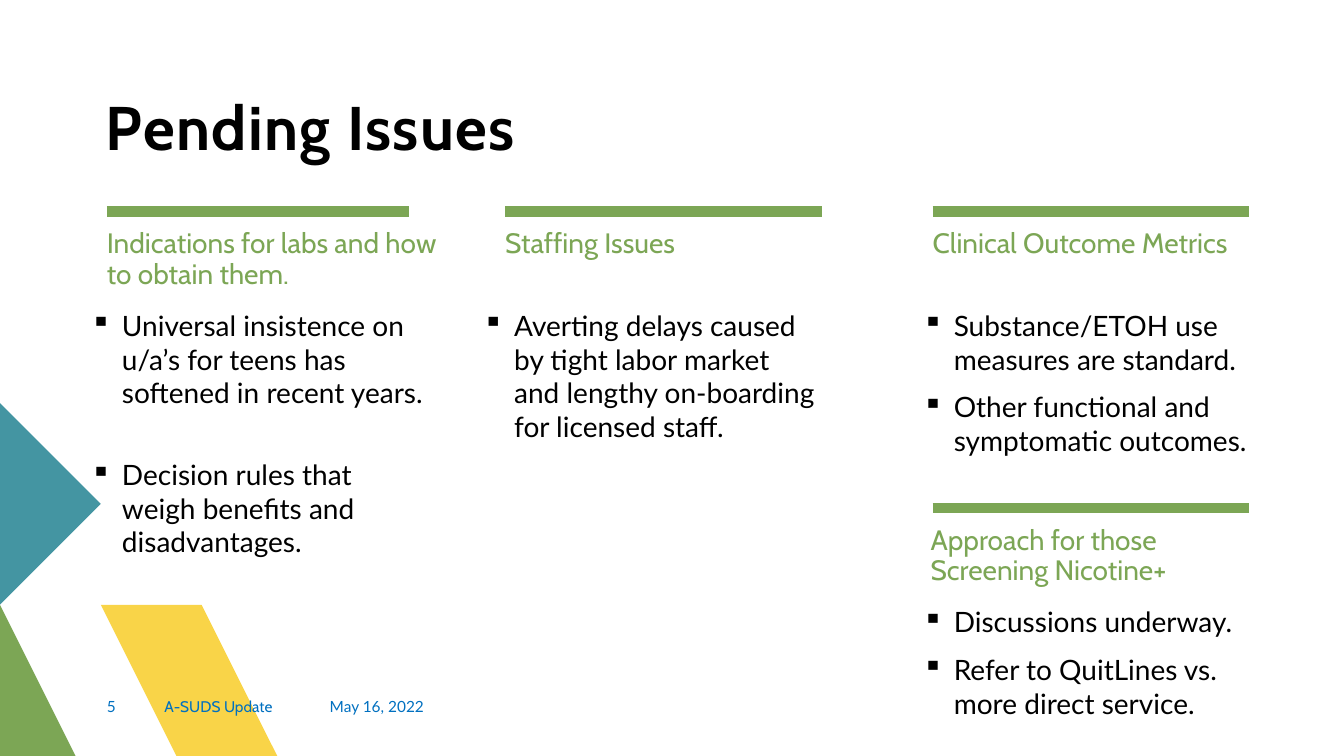
from lxml.etree import SubElement
from pptx import Presentation
from pptx.dml.color import RGBColor
from pptx.enum.shapes import MSO_CONNECTOR
from pptx.enum.text import MSO_ANCHOR, MSO_AUTO_SIZE, PP_ALIGN
from pptx.oxml.ns import qn
from pptx.util import Inches, Pt

COLORS = {"green": "7CA655", "yellow": "F9D448", "teal": "4495A2",
          "blue": "0070C0", "black": "000000"}

CORNER_ART = [
    ("yellow", [(3.24, 7.5), (2.15, 7.5), (1.06, 6.41), (1.61, 5.87)]),
    ("green", [(1.06, 7.5), (0, 7.5), (0, 6.44)]),
    ("teal", [(0, 4.27), (1.06, 5.33), (0, 6.39)]),
]

TOPICS = [
    {"rule": (1.06, 2.1, 3), "heading_left": 1.06, "bullets_box": (0.9, 3.06, 3.32, 2.12),
     "heading": "Indications for labs and how to obtain them.", "gap": 34.5,
     "bullets": ["Universal insistence on u/a’s for teens has softened in recent years.",
                 "Decision rules that weigh benefits and disadvantages."]},
    {"rule": (5.01, 2.1, 3.14), "heading_left": 5.01, "bullets_box": (4.79, 3.06, 3.34, 2.12),
     "heading": "Staffing Issues", "gap": 10,
     "bullets": ["Averting delays caused by tight labor market and lengthy "
                 "on-boarding for licensed staff."]},
    {"rule": (9.25, 2.1, 3.14), "heading_left": 9.25, "bullets_box": (9.15, 3.06, 3.34, 2.12),
     "heading": "Clinical Outcome Metrics", "gap": 10,
     "bullets": ["Substance/ETOH use measures are standard.",
                 "Other functional and symptomatic outcomes."]},
    {"rule": (9.25, 5.04, 3.14), "heading_left": 9.23, "bullets_box": (9.15, 6, 3.32, 1.25),
     "heading": "Approach for those Screening Nicotine+", "gap": 10,
     "bullets": ["Discussions underway.",
                 "Refer to QuitLines vs. more direct service."]},
]

FOOTER = [("5", 1.06, 0.57, "Lato"), ("A-SUDS Update", 1.63, 1.64, "Cabin"),
          ("May 16, 2022", 3.27, 1.44, "Lato")]


def rgb(color):
    """Return the named colour."""
    return RGBColor.from_string(COLORS[color])


def set_all(target, formats):
    """Set each attribute in the dict on the target."""
    for attribute, value in formats.items():
        setattr(target, attribute, value)


def prepare_frame(frame, anchor=MSO_ANCHOR.TOP):
    """Give a text frame wrapping and no insets."""
    set_all(frame, {"word_wrap": True, "auto_size": MSO_AUTO_SIZE.NONE,
                    "vertical_anchor": anchor, "margin_left": 0, "margin_top": 0,
                    "margin_right": 0, "margin_bottom": 0})


def write(paragraph, text, font, size, color, bold=False, **layout):
    """Write one formatted run and lay out its paragraph."""
    run = paragraph.add_run()
    run.text = text
    set_all(run.font, {"name": font, "size": Pt(size), "bold": bold})
    run.font.color.rgb = rgb(color)
    set_all(paragraph, {"alignment": PP_ALIGN.LEFT, **layout})
    return run


def add_frame(slide, box):
    """Add a text box and return its frame."""
    frame = slide.shapes.add_textbox(*map(Inches, box)).text_frame
    prepare_frame(frame)
    return frame


def add_corner_piece(slide, color, points):
    """Draw one filled polygon of the corner decoration."""
    builder = slide.shapes.build_freeform(*points[0], scale=Inches(1))
    builder.add_line_segments(points[1:], close=True)
    piece = builder.convert_to_shape()
    piece.shadow.inherit = False
    piece.fill.solid()
    piece.fill.fore_color.rgb = rgb(color)
    piece.line.fill.background()


def add_title(slide, text):
    """Place and format the title placeholder."""
    title = slide.shapes.title
    set_all(title, {"left": Inches(1.05), "top": Inches(0.96),
                    "width": Inches(5.4), "height": Inches(0.67)})
    prepare_frame(title.text_frame, MSO_ANCHOR.BOTTOM)
    run = write(title.text_frame.paragraphs[0], text, "Cabin", 44, "black",
                bold=True, line_spacing=0.9, space_before=Pt(0))
    run.font._element.set("spc", "100")


def add_rule(slide, left, top, width):
    """Draw the thick green rule above a topic."""
    rule = slide.shapes.add_connector(
        MSO_CONNECTOR.STRAIGHT, Inches(left), Inches(top), Inches(left + width), Inches(top))
    rule.line.width = Pt(7.75)
    rule.line.color.rgb = rgb("green")
    SubElement(rule._element.spPr, qn("a:effectLst"))


def add_bullets(slide, box, bullets, gap):
    """Add a square-bulleted list with the given gap in points."""
    frame = add_frame(slide, box)
    for index, text in enumerate(bullets):
        paragraph = frame.add_paragraph() if index else frame.paragraphs[0]
        write(paragraph, text, "Lato", 20, "black", space_before=Pt(gap if index else 10))
        properties = paragraph._p.get_or_add_pPr()
        properties.set("marL", str(Inches(0.31)))
        properties.set("indent", str(-Inches(0.31)))
        SubElement(properties, qn("a:buChar")).set("char", "▪")


def add_topic(slide, topic):
    """Add a topic's rule, heading and bullets."""
    add_rule(slide, *topic["rule"])
    heading_top = topic["rule"][1] + 0.18
    heading = add_frame(slide, (topic["heading_left"], heading_top, 3.32, 0.44))
    write(heading.paragraphs[0], topic["heading"], "Cabin", 20, "green",
          line_spacing=0.9, space_before=Pt(10))
    add_bullets(slide, topic["bullets_box"], topic["bullets"], topic["gap"])


def main():
    """Build and save the slide."""
    presentation = Presentation()
    set_all(presentation, {"slide_width": Inches(13.33), "slide_height": Inches(7.5)})
    slide = presentation.slides.add_slide(presentation.slide_layouts.get_by_name("Title Only"))
    for color, points in CORNER_ART:
        add_corner_piece(slide, color, points)
    add_title(slide, "Pending Issues")
    for topic in TOPICS:
        add_topic(slide, topic)
    for text, left, width, font in FOOTER:
        frame = add_frame(slide, (left, 6.92, width, 0.27))
        write(frame.paragraphs[0], text, font, 11, "blue")
    presentation.save("out.pptx")


if __name__ == "__main__":
    main()
